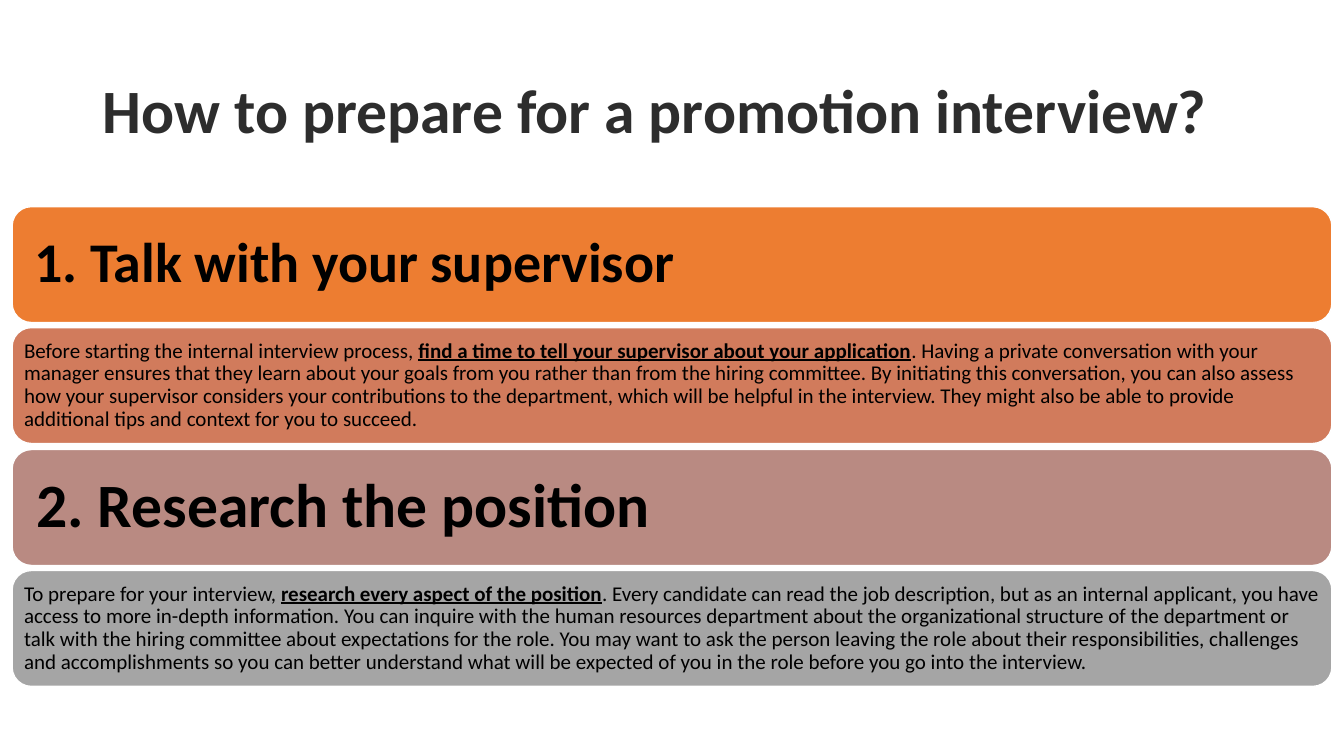
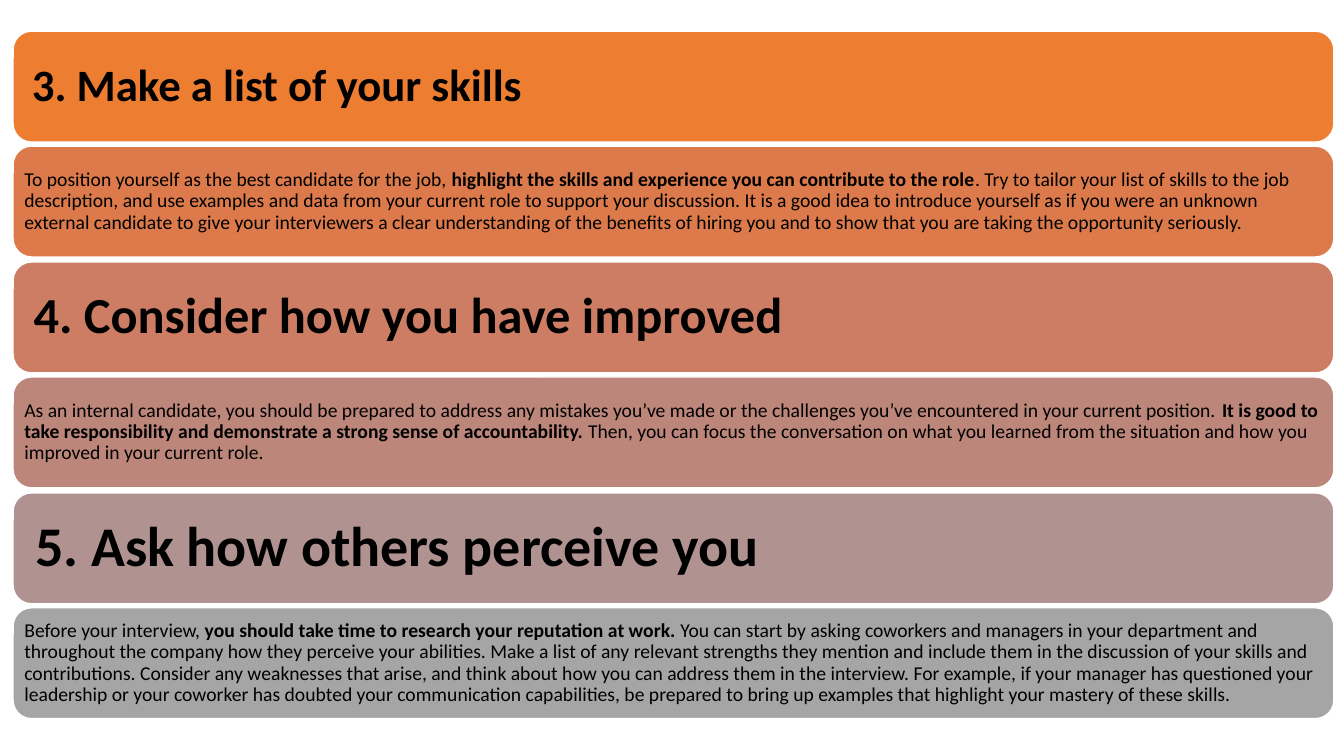
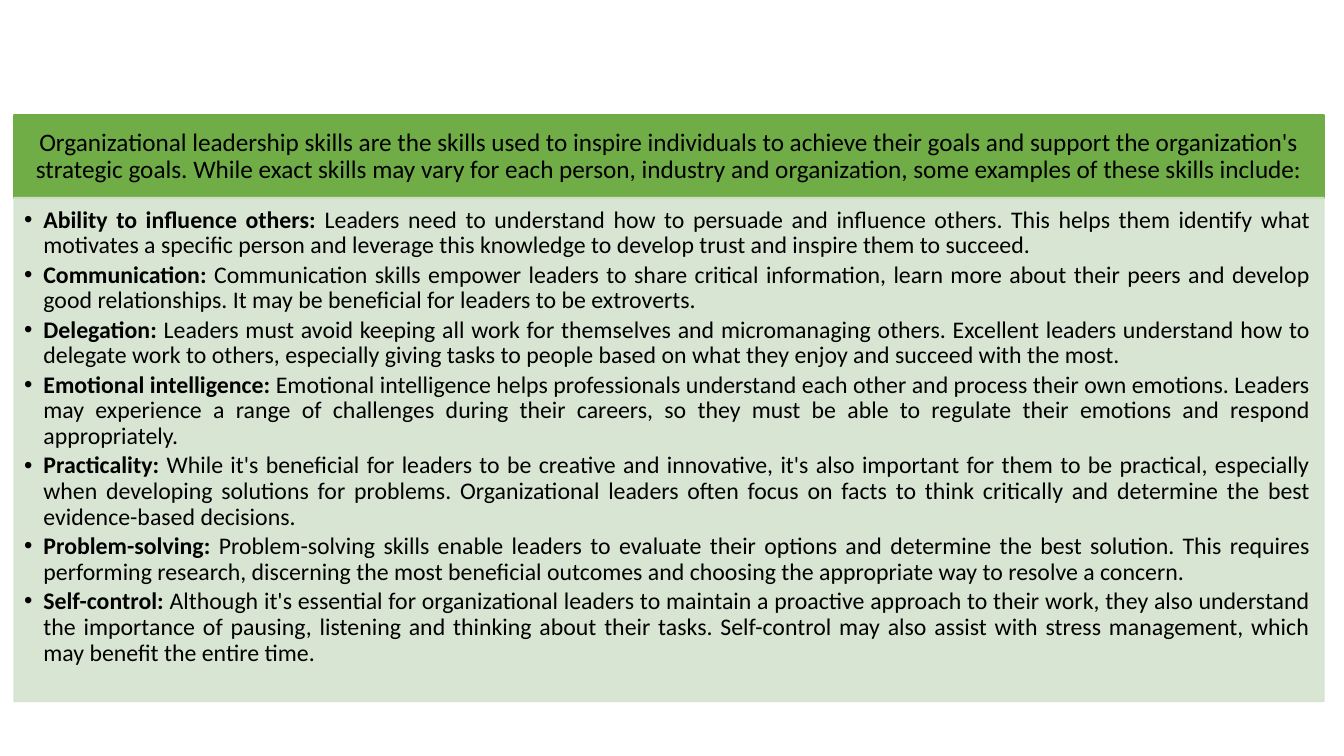
"""Builds three slides on promotion interviews and leadership skills."""
from dataclasses import dataclass

from lxml.etree import SubElement
from pptx import Presentation
from pptx.dml.color import RGBColor
from pptx.enum.shapes import MSO_SHAPE
from pptx.enum.text import MSO_ANCHOR, MSO_AUTO_SIZE, PP_ALIGN
from pptx.oxml.ns import qn
from pptx.util import Pt

PX = 9144
TITLE_AND_LIST, TITLE_ONLY, BLANK = 1, 5, 6


@dataclass(frozen=True)
class Theme:
    font: str = "Calibri"
    title: str = "2D2D2D"
    ink: str = "000000"
    edge: str = "FFFFFF"
    banner: str = "70AD47"
    panel: str = "D5E3CF"
    panel_opacity: int = 90
    four_bands: tuple = ("ED7D31", "D17B5C", "B98A82", "A5A5A5")
    six_bands: tuple = ("ED7D31", "DC7A4B", "CC7D64", "BD867B", "B09391", "A5A5A5")
    title_size: int = 44
    banner_size: int = 18
    list_size: int = 17
    line_spacing: float = 0.9
    inset_ratio: float = 0.3
    list_gap_ratio: float = 0.15


class Deck:
    def __init__(self, theme):
        self.theme = theme
        self.presentation = Presentation()
        self.presentation.slide_width = 1333 * PX
        self.presentation.slide_height = 750 * PX
        self.slide = None

    def new_slide(self, layout):
        layouts = self.presentation.slide_layouts
        self.slide = self.presentation.slides.add_slide(layouts[layout])

    def place(self, shape, left, top, width, height):
        shape.left, shape.top = left * PX, top * PX
        shape.width, shape.height = width * PX, height * PX

    def paint(self, shape, fill, edge, opacity=100):
        shape.fill.solid()
        shape.fill.fore_color.rgb = RGBColor.from_string(fill)
        shape.line.color.rgb = RGBColor.from_string(edge)
        shape.line.width = Pt(1)
        if opacity < 100:
            for color in shape._element.spPr.iter(qn("a:srgbClr")):
                SubElement(color, qn("a:alpha"), val=str(opacity * 1000))

    def set_frame(self, frame, anchor, left, top, right, bottom):
        frame.word_wrap = True
        frame.auto_size = MSO_AUTO_SIZE.NONE
        frame.vertical_anchor = anchor
        frame.margin_left, frame.margin_top = left, top
        frame.margin_right, frame.margin_bottom = right, bottom

    def add_words(self, paragraph, parts, size, color=None, align=PP_ALIGN.LEFT, underline=False):
        paragraph.alignment = align
        paragraph.line_spacing = self.theme.line_spacing
        paragraph.space_before = paragraph.space_after = Pt(0)
        for words, strong in parts:
            run = paragraph.add_run()
            run.text = words
            run.font.name = self.theme.font
            run.font.size = Pt(size)
            run.font.bold = strong
            run.font.underline = strong and underline
            run.font.color.rgb = RGBColor.from_string(color or self.theme.ink)

    def title(self, words):
        heading = self.slide.shapes.title
        self.place(heading, 92, 40, 1150, 145)
        self.set_frame(heading.text_frame, MSO_ANCHOR.MIDDLE, 10 * PX, 5 * PX, 10 * PX, 5 * PX)
        self.add_words(heading.text_frame.paragraphs[0], [(words, True)],
                       self.theme.title_size, self.theme.title)

    def band(self, box, fill, parts, size, underline):
        strip = self.slide.shapes.add_shape(MSO_SHAPE.ROUNDED_RECTANGLE, 0, 0, 0, 0)
        self.place(strip, *box)
        strip.shadow.inherit = False
        self.paint(strip, fill, self.theme.edge)
        inset = Pt(size * self.theme.inset_ratio)
        self.set_frame(strip.text_frame, MSO_ANCHOR.MIDDLE, inset, inset, inset, inset)
        self.add_words(strip.text_frame.paragraphs[0], parts, size, underline=underline)

    def steps(self, steps, fills, box, last_top, detail_size, underline=False):
        left, top, width, height = box
        rows = []
        for heading, heading_size, before, key, after in steps:
            rows.append(([(heading, True)], heading_size, False))
            rows.append(([(before, False), (key, True), (after, False)], detail_size, underline))
        pitch = (last_top - top) / (len(rows) - 1)
        for index, (fill, (parts, size, underlined)) in enumerate(zip(fills, rows)):
            row_box = (left, top + round(index * pitch), width, height)
            self.band(row_box, fill, parts, size, underlined)

    def banner(self, words, box):
        heading = self.slide.shapes.title
        self.place(heading, *box)
        self.paint(heading, self.theme.banner, self.theme.banner)
        self.set_frame(heading.text_frame, MSO_ANCHOR.MIDDLE, 14 * PX, 8 * PX, 14 * PX, 8 * PX)
        self.add_words(heading.text_frame.paragraphs[0], [(words, False)],
                       self.theme.banner_size, align=PP_ALIGN.CENTER)

    def definitions(self, entries, box):
        panel = self.slide.placeholders[1]
        self.place(panel, *box)
        self.paint(panel, self.theme.panel, self.theme.panel, self.theme.panel_opacity)
        frame = panel.text_frame
        self.set_frame(frame, MSO_ANCHOR.TOP, 10 * PX, 10 * PX, 13 * PX, 15 * PX)
        size = self.theme.list_size
        for index, (term, meaning) in enumerate(entries):
            entry = frame.add_paragraph() if index else frame.paragraphs[0]
            self.add_words(entry, [(term, True), (meaning, False)], size, align=PP_ALIGN.JUSTIFY)
            entry.space_after = Pt(size * self.theme.list_gap_ratio)
            properties = entry._p.get_or_add_pPr()
            properties.set("marL", str(19 * PX))
            properties.set("indent", str(-19 * PX))
            SubElement(properties, qn("a:buChar"), char="•")


FIRST_STEPS = [
    ("1. Talk with your supervisor", 40,
     "Before starting the internal interview process, ",
     "find a time to tell your supervisor about your application",
     ". Having a private conversation with your manager ensures that they learn about your goals "
     "from you rather than from the hiring committee. By initiating this conversation, you can "
     "also assess how your supervisor considers your contributions to the department, which will "
     "be helpful in the interview. They might also be able to provide additional tips and context "
     "for you to succeed."),
    ("2. Research the position", 44,
     "To prepare for your interview, ",
     "research every aspect of the position",
     ". Every candidate can read the job description, but as an internal applicant, you have "
     "access to more in-depth information. You can inquire with the human resources department "
     "about the organizational structure of the department or talk with the hiring committee "
     "about expectations for the role. You may want to ask the person leaving the role about "
     "their responsibilities, challenges and accomplishments so you can better understand what "
     "will be expected of you in the role before you go into the interview."),
]

LATER_STEPS = [
    ("3. Make a list of your skills", 32,
     "To position yourself as the best candidate for the job, ",
     "highlight the skills and experience you can contribute to the role",
     ". Try to tailor your list of skills to the job description, and use examples and data from "
     "your current role to support your discussion. It is a good idea to introduce yourself as if "
     "you were an unknown external candidate to give your interviewers a clear understanding of "
     "the benefits of hiring you and to show that you are taking the opportunity seriously."),
    ("4. Consider how you have improved", 36,
     "As an internal candidate, you should be prepared to address any mistakes you’ve made or "
     "the challenges you’ve encountered in your current position. ",
     "It is good to take responsibility and demonstrate a strong sense of accountability.",
     " Then, you can focus the conversation on what you learned from the situation and how you "
     "improved in your current role."),
    ("5. Ask how others perceive you", 40,
     "Before your interview, ",
     "you should take time to research your reputation at work.",
     " You can start by asking coworkers and managers in your department and throughout the "
     "company how they perceive your abilities. Make a list of any relevant strengths they "
     "mention and include them in the discussion of your skills and contributions. Consider any "
     "weaknesses that arise, and think about how you can address them in the interview. For "
     "example, if your manager has questioned your leadership or your coworker has doubted your "
     "communication capabilities, be prepared to bring up examples that highlight your mastery "
     "of these skills."),
]

LEADERSHIP_INTRO = (
    "Organizational leadership skills are the skills used to inspire individuals to achieve their "
    "goals and support the organization's strategic goals. While exact skills may vary for each "
    "person, industry and organization, some examples of these skills include:")

LEADERSHIP_SKILLS = [
    ("Ability to influence others:",
     " Leaders need to understand how to persuade and influence others. This helps them identify "
     "what motivates a specific person and leverage this knowledge to develop trust and inspire "
     "them to succeed."),
    ("Communication:",
     " Communication skills empower leaders to share critical information, learn more about their "
     "peers and develop good relationships. It may be beneficial for leaders to be extroverts."),
    ("Delegation:",
     " Leaders must avoid keeping all work for themselves and micromanaging others. Excellent "
     "leaders understand how to delegate work to others, especially giving tasks to people based "
     "on what they enjoy and succeed with the most."),
    ("Emotional intelligence:",
     " Emotional intelligence helps professionals understand each other and process their own "
     "emotions. Leaders may experience a range of challenges during their careers, so they must "
     "be able to regulate their emotions and respond appropriately."),
    ("Practicality:",
     " While it's beneficial for leaders to be creative and innovative, it's also important for "
     "them to be practical, especially when developing solutions for problems. Organizational "
     "leaders often focus on facts to think critically and determine the best evidence-based "
     "decisions."),
    ("Problem-solving:",
     " Problem-solving skills enable leaders to evaluate their options and determine the best "
     "solution. This requires performing research, discerning the most beneficial outcomes and "
     "choosing the appropriate way to resolve a concern."),
    ("Self-control:",
     " Although it's essential for organizational leaders to maintain a proactive approach to "
     "their work, they also understand the importance of pausing, listening and thinking about "
     "their tasks. Self-control may also assist with stress management, which may benefit the "
     "entire time."),
]


def main():
    theme = Theme()
    deck = Deck(theme)

    deck.new_slide(TITLE_ONLY)
    deck.title("How to prepare for a promotion interview?")
    deck.steps(FIRST_STEPS, theme.four_bands, (12, 205, 1309, 115), 566, 15, underline=True)

    deck.new_slide(BLANK)
    deck.steps(LATER_STEPS, theme.six_bands, (13, 31, 1310, 110), 603, 14)

    deck.new_slide(TITLE_AND_LIST)
    deck.banner(LEADERSHIP_INTRO, (14, 114, 1299, 83))
    deck.definitions(LEADERSHIP_SKILLS, (14, 196, 1299, 500))

    deck.presentation.save("out.pptx")


if __name__ == "__main__":
    main()
